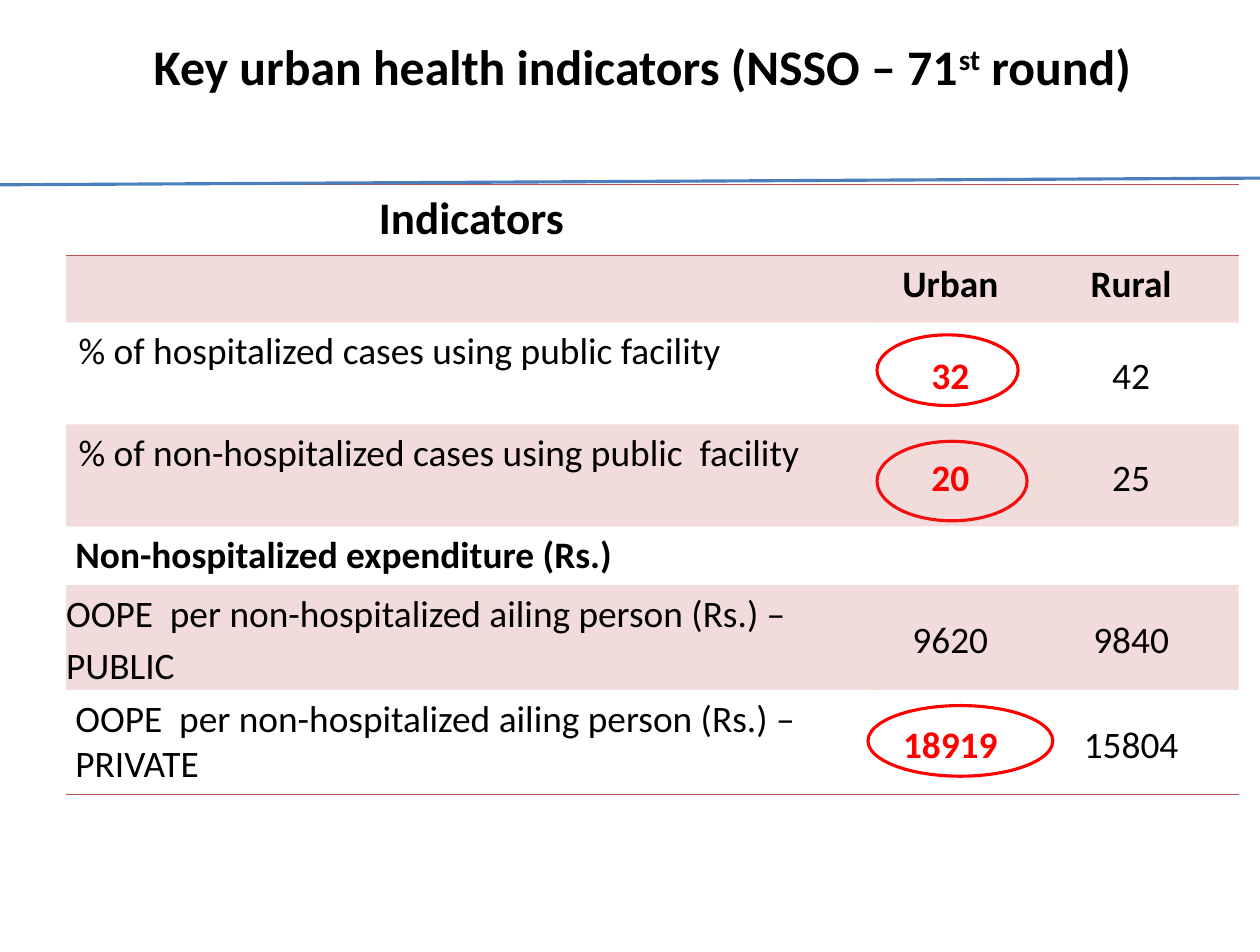
from lxml import etree
from pptx import Presentation
from pptx.dml.color import RGBColor
from pptx.enum.shapes import MSO_CONNECTOR, MSO_SHAPE
from pptx.enum.text import MSO_ANCHOR as ANCHOR, PP_ALIGN as ALIGN
from pptx.oxml.ns import qn
from pptx.util import Pt

COLORS = {"text": "000000", "highlight": "FF0000", "band": "C0504D",
          "rule": "4B7EBC", "paper": "FFFFFF"}
NO_STYLE = "{2D5ABB26-0587-4C30-8999-92F81FD0307C}"


def rgb(name):
    return RGBColor.from_string(COLORS[name])


def add_run(paragraph, text, size, bold=False, color="text"):
    run = paragraph.add_run()
    run.text = text
    run.font.name = "Calibri"
    run.font.size = Pt(size)
    run.font.bold = bold
    run.font.color.rgb = rgb(color)
    return run


prs = Presentation()
prs.slide_width, prs.slide_height = Pt(810), Pt(612)
slide = prs.slides.add_slide(prs.slide_layouts[6])

# Rings behind the highlighted urban values
for left, top, width, height in [(558, 453.6, 118.8, 45.4),
                                 (563.8, 283.7, 96.5, 51.1),
                                 (563.8, 215.3, 90.7, 45.4)]:
    ring = slide.shapes.add_shape(MSO_SHAPE.OVAL, Pt(left), Pt(top), Pt(width), Pt(height))
    ring.shadow.inherit = False
    ring.fill.solid()
    ring.fill.fore_color.rgb = rgb("paper")
    ring.line.color.rgb = rgb("highlight")
    ring.line.width = Pt(2)

# Indicator table: label, urban, rural
rows = [
    ("Indicators", "", ""),
    ("", "Urban", "Rural"),
    ("% of hospitalized cases using public facility", "32", "42"),
    ("% of non-hospitalized cases using public  facility", "20", "25"),
    ("Non-hospitalized expenditure (Rs.)", "", ""),
    ("OOPE  per non-hospitalized ailing person (Rs.) – PUBLIC", "9620", "9840"),
    ("OOPE  per non-hospitalized ailing person (Rs.) – PRIVATE", "18919", "15804"),
]
col_widths = [521.3, 94.3, 138.2]
row_heights = [45.4, 43.2, 65.5, 65.5, 37.4, 66.2, 65.5]
banded_rows = {1, 3, 5}
section_rows = {0, 4}
bold_rows = {0, 1, 4}
highlights = {"32", "20", "18919"}
edges = {0: ("lnT", "lnB"), 6: ("lnB",)}
label_pads = [8, 8, 8, 8, 6, 0, 6]

indicators = slide.shapes.add_table(
    len(rows), len(col_widths), Pt(42.5), Pt(118.8),
    Pt(sum(col_widths)), Pt(sum(row_heights))).table
indicators.first_row = indicators.horz_banding = False
indicators._tbl.tblPr.find(qn("a:tableStyleId")).text = NO_STYLE
for column, width in zip(indicators.columns, col_widths):
    column.width = Pt(width)
for row, height in zip(indicators.rows, row_heights):
    row.height = Pt(height)
for r in section_rows:
    indicators.cell(r, 1).merge(indicators.cell(r, 2))

for r, texts in enumerate(rows):
    for c, text in enumerate(texts):
        cell = indicators.cell(r, c)
        is_value = c > 0 and r > 1
        is_public = c == 0 and r == 5

        # Padding and anchor
        pad = 0 if is_value else label_pads[r]
        cell.margin_left = cell.margin_right = Pt(pad)
        cell.margin_top = cell.margin_bottom = Pt(4.3 if pad else 0)
        cell.vertical_anchor = (ANCHOR.MIDDLE if is_value else
                                ANCHOR.BOTTOM if is_public else ANCHOR.TOP)

        # Borders come before the fill
        for edge in edges.get(r, ()):
            border = etree.SubElement(cell._tc.get_or_add_tcPr(), qn(f"a:{edge}"), w=str(Pt(1)))
            paint = etree.SubElement(border, qn("a:solidFill"))
            etree.SubElement(paint, qn("a:srgbClr"), val=COLORS["band"])
        if r in banded_rows:
            cell.fill.solid()
            cell.fill.fore_color.rgb = rgb("band")
            tint = cell._tc.tcPr.find(qn("a:solidFill")).find(qn("a:srgbClr"))
            etree.SubElement(tint, qn("a:alpha"), val="20000")
        else:
            cell.fill.background()

        # Text
        if text:
            paragraph = cell.text_frame.paragraphs[0]
            paragraph.alignment = ALIGN.CENTER if c or r == 0 else ALIGN.LEFT
            if is_value or is_public:
                paragraph.line_spacing = 1.15
            marked = text in highlights
            add_run(paragraph, text, 29 if r == 0 else 24, r in bold_rows or marked,
                    "highlight" if marked else "text")

# Title
title = slide.shapes.add_textbox(Pt(28.1), Pt(19.4), Pt(769.7), Pt(85)).text_frame
title.word_wrap = True
heading = title.paragraphs[0]
heading.alignment = ALIGN.CENTER
add_run(heading, "Key urban health indicators (NSSO – 71", 32, True)
ordinal = add_run(heading, "st", 32, True)
ordinal.font._element.set("baseline", "30000")
add_run(heading, " round)", 32, True)

# Rule under the title
rule = slide.shapes.add_connector(MSO_CONNECTOR.STRAIGHT, Pt(0), Pt(118.8), Pt(810), Pt(114.5))
rule.line.color.rgb = rgb("rule")
rule.line.width = Pt(2)
etree.SubElement(rule._element.spPr, qn("a:effectLst"))

prs.save("out.pptx")
